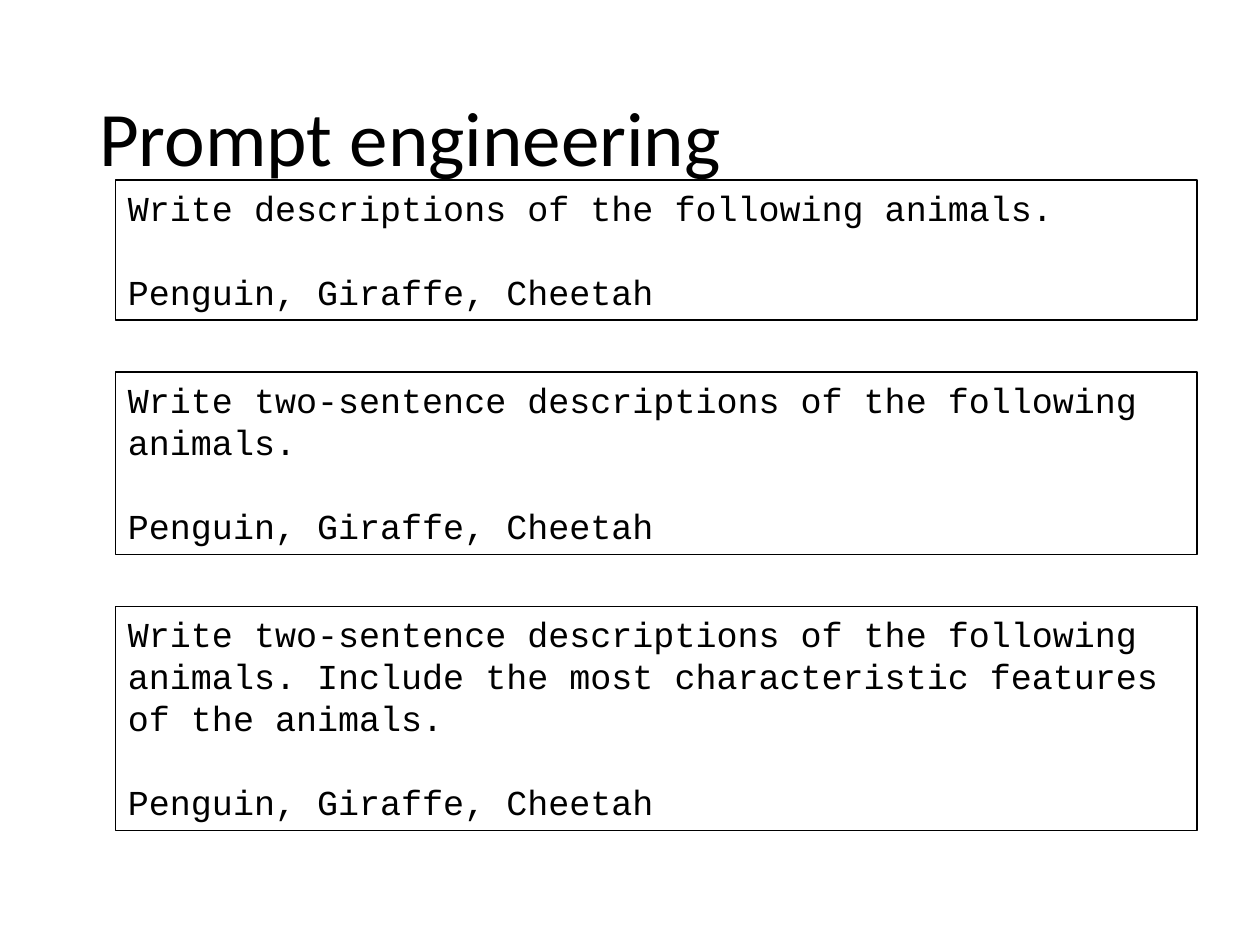
from dataclasses import dataclass

from pptx import Presentation
from pptx.dml.color import RGBColor
from pptx.enum.shapes import MSO_SHAPE
from pptx.enum.text import MSO_ANCHOR, MSO_AUTO_SIZE, PP_ALIGN
from pptx.util import Cm, Pt

RECTANGLE = MSO_SHAPE.RECTANGLE
MIDDLE = MSO_ANCHOR.MIDDLE
TOP = MSO_ANCHOR.TOP
FIT_TEXT = MSO_AUTO_SIZE.SHAPE_TO_FIT_TEXT
LEFT = PP_ALIGN.LEFT
BLANK_LAYOUT = 6


@dataclass(frozen=True)
class Theme:
    ink: RGBColor = RGBColor(0, 0, 0)
    title_font: str = "Calibri"
    title_size: Pt = Pt(44)
    prompt_font: str = "Courier New"
    prompt_size: Pt = Pt(20)
    prompt_gap: Pt = Pt(24)
    border: Pt = Pt(0.75)


THEME = Theme()
ANIMALS = "Penguin, Giraffe, Cheetah"
# Each prompt: instruction and box height in centimetres
PROMPTS = [
    ("Write descriptions of the following animals.", 2.82),
    ("Write two-sentence descriptions of the following animals.", 3.68),
    ("Write two-sentence descriptions of the following animals. "
     "Include the most characteristic features of the animals.", 4.52),
]
FIRST_TOP = 3.63
BOX_GAP = 1.05


def format_paragraph(para, font_name, size):
    para.alignment = LEFT
    for span in para.runs:
        span.font.name = font_name
        span.font.size = size
        span.font.color.rgb = THEME.ink


def add_title(page, text):
    box = page.shapes.add_textbox(Cm(1.75), Cm(1.02), Cm(21.9), Cm(3.68))
    frame = box.text_frame
    frame.word_wrap = True
    frame.vertical_anchor = MIDDLE
    frame.text = text
    para = frame.paragraphs[0]
    para.line_spacing = 0.9
    format_paragraph(para, THEME.title_font, THEME.title_size)


def add_prompt(page, top, height, instruction):
    box = page.shapes.add_shape(RECTANGLE, Cm(2.33), Cm(top), Cm(21.8), Cm(height))
    box.shadow.inherit = False
    box.fill.background()
    box.line.color.rgb = THEME.ink
    box.line.width = THEME.border
    frame = box.text_frame
    frame.word_wrap = True
    frame.auto_size = FIT_TEXT
    frame.vertical_anchor = TOP
    frame.text = f"{instruction}\n{ANIMALS}"
    for para in frame.paragraphs:
        format_paragraph(para, THEME.prompt_font, THEME.prompt_size)
    frame.paragraphs[1].space_before = THEME.prompt_gap


def main():
    deck = Presentation()
    deck.slide_width, deck.slide_height = Cm(25.4), Cm(19.05)
    page = deck.slides.add_slide(deck.slide_layouts[BLANK_LAYOUT])
    add_title(page, "Prompt engineering")
    top = FIRST_TOP
    for instruction, height in PROMPTS:
        add_prompt(page, top, height, instruction)
        top += height + BOX_GAP
    deck.save("out.pptx")


if __name__ == "__main__":
    main()
